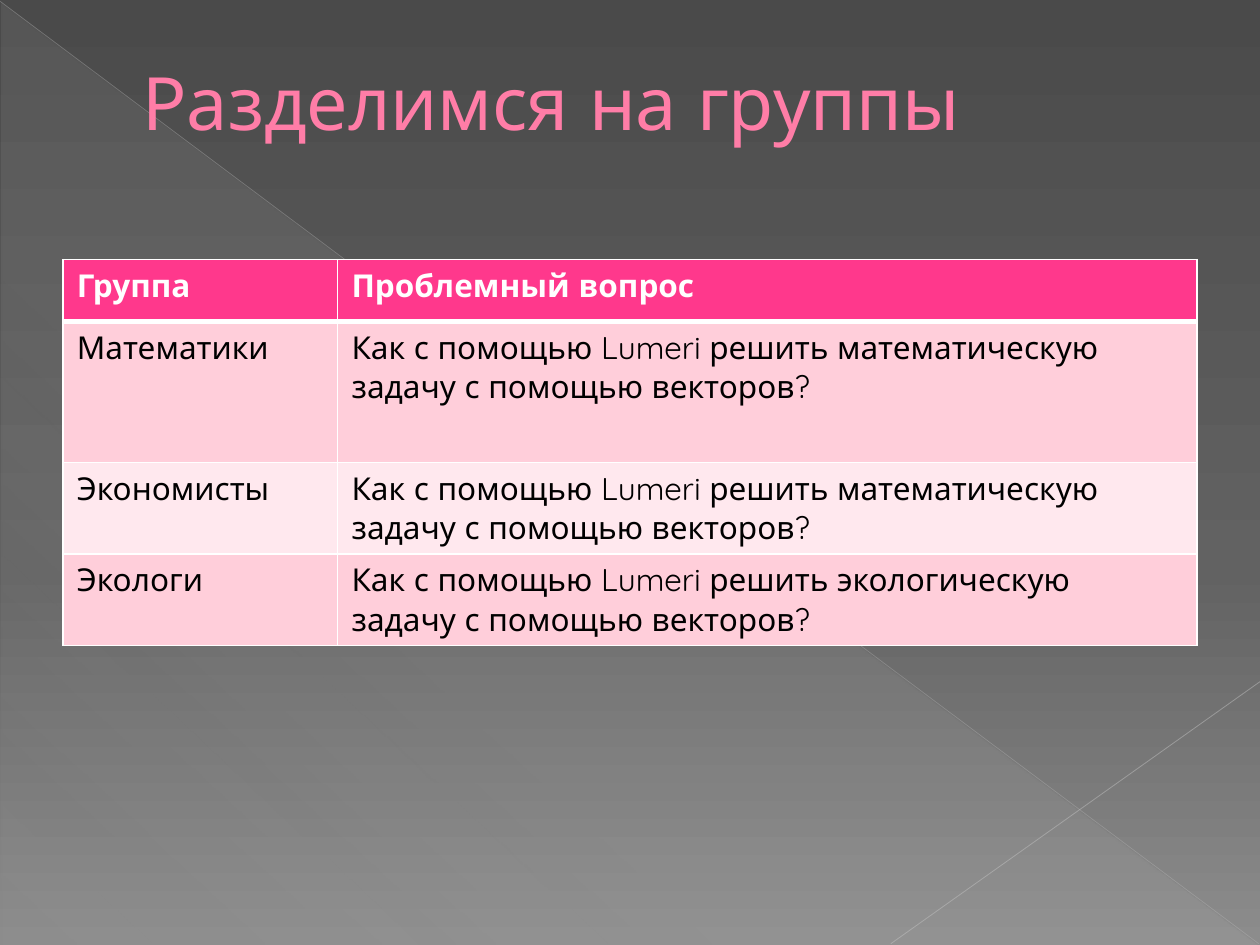
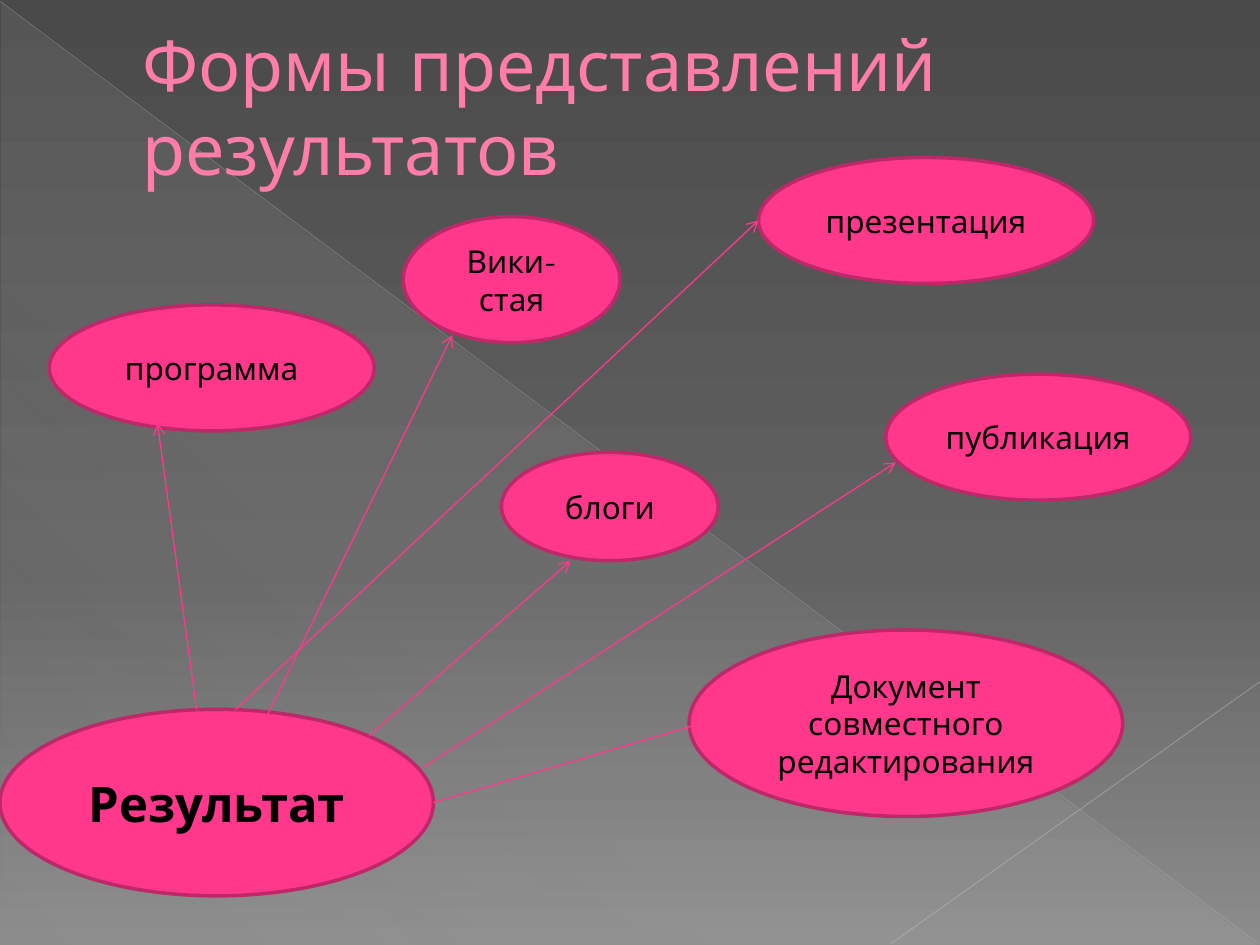
from dataclasses import dataclass
from typing import NamedTuple

from lxml import etree
from pptx import Presentation
from pptx import util as u
from pptx.dml.color import RGBColor
from pptx.enum import shapes, text
from pptx.oxml.ns import qn


class Stop(NamedTuple):
    position: int
    color: str
    opacity: int = 100


@dataclass(frozen=True)
class Theme:
    font: str = "Quicksand"
    title: str = "FF7DA7"
    title_outline: str = "B12761"
    accent: str = "FF388C"
    accent_edge: str = "BD2968"
    ink: str = "000000"
    white: str = "FFFFFF"
    bands: tuple[str, str] = ("FFCEDA", "FFE8EE")
    background: tuple[Stop, ...] = (Stop(0, "4A4A4A"), Stop(60, "626262"), Stop(100, "8C8C8C"))
    veil: tuple[Stop, ...] = (Stop(0, "D2D2D2", 10), Stop(70, "D2D2D2", 8), Stop(100, "D2D2D2", 1))
    body_size: float = 18
    hub_size: float = 28


THEME = Theme()


class Line(NamedTuple):
    start: tuple[float, float]
    end: tuple[float, float]
    color: str = THEME.accent
    width: float = 0.75
    opacity: int = 100
    arrow: bool = True


class Bubble(NamedTuple):
    caption: str
    left: float
    top: float
    width: float
    height: float = 1
    size: float = THEME.body_size
    bold: bool = False


DECORATION = [
    Line((0, 0.01), (9.99, 7.49), "BFBFBF", 0.39, 35, False),
    Line((10, 5.41), (7.07, 7.49), "C6C6C6", 0.47, 45, False),
]

GROUPS = [
    ("Группа", "Проблемный вопрос"),
    ("Математики", "Как с помощью Lumeri решить математическую задачу с помощью векторов?"),
    ("Экономисты", "Как с помощью Lumeri решить математическую задачу с помощью векторов?"),
    ("Экологи", "Как с помощью Lumeri решить экологическую задачу с помощью векторов?"),
]
COLUMN_WIDTHS = (2.18, 6.82)
ROW_HEIGHTS = (0.49, 1.12, 0.49, 0.49)

BUBBLES = [
    Bubble("Результат", 0, 5.63, 3.44, 1.48, THEME.hub_size, True),
    Bubble("Вики-стая", 3.2, 1.72, 1.72),
    Bubble("публикация", 7.03, 2.97, 2.42),
    Bubble("программа", 0.39, 2.42, 2.58),
    Bubble("презентация", 6.02, 1.25, 2.66),
    Bubble("блоги", 3.98, 3.59, 1.72, 0.86),
    Bubble("Документ совместного редактирования", 5.47, 5, 3.44, 1.48),
]
ARROWS = [
    Line((1.56, 5.63), (1.25, 3.36)),
    Line((2.93, 5.84), (4.53, 4.45)),
    Line((3.44, 6.37), (5.7, 5.7)),
    Line((2.11, 5.7), (3.59, 2.66)),
    Line((3.36, 6.09), (7.11, 3.67)),
    Line((1.87, 5.63), (6.02, 1.75)),
]


def add_color(parent, color: str, opacity: int = 100) -> None:
    node = etree.SubElement(parent, qn("a:srgbClr"), val=color)
    if opacity < 100:
        etree.SubElement(node, qn("a:alpha"), val=str(opacity * 1000))


def make_line(tag: str, color: str, points: float):
    line = etree.Element(qn(tag), w=str(u.Pt(points)))
    add_color(etree.SubElement(line, qn("a:solidFill")), color)
    return line


def set_gradient(gradient, stops: tuple[Stop, ...], angle: int) -> None:
    for child in list(gradient):
        gradient.remove(child)
    stop_list = etree.SubElement(gradient, qn("a:gsLst"))
    for stop in stops:
        node = etree.SubElement(stop_list, qn("a:gs"), pos=str(stop.position * 1000))
        add_color(node, stop.color, stop.opacity)
    etree.SubElement(gradient, qn("a:lin"), ang=str(angle * 60000), scaled="0")


def write_text(frame, content: str, *, size: float = THEME.body_size, color: str = THEME.ink,
               bold: bool = False, align=text.PP_ALIGN.LEFT, anchor=text.MSO_ANCHOR.MIDDLE):
    frame.word_wrap = True
    frame.vertical_anchor = anchor
    paragraph = frame.paragraphs[0]
    paragraph.alignment = align
    run = paragraph.add_run()
    run.text = content
    run.font.name = THEME.font
    run.font.size = u.Pt(size)
    run.font.bold = bold
    run.font.color.rgb = RGBColor.from_string(color)
    return paragraph


def add_line(slide, line: Line):
    connector = slide.shapes.add_connector(
        shapes.MSO_CONNECTOR.STRAIGHT, *map(u.Inches, line.start + line.end))
    connector.line.width = u.Pt(line.width)
    connector.line.color.rgb = RGBColor.from_string(line.color)
    properties = connector.element.spPr
    if line.opacity < 100:
        color = properties.find(".//" + qn("a:srgbClr"))
        etree.SubElement(color, qn("a:alpha"), val=str(line.opacity * 1000))
    if line.arrow:
        etree.SubElement(properties.find(qn("a:ln")), qn("a:tailEnd"), type="arrow")
    etree.SubElement(properties, qn("a:effectLst"))
    return connector


def add_title_slide(presentation, title: str, size: float, height: float):
    slide = presentation.slides.add_slide(presentation.slide_layouts[5])
    shape = slide.shapes.title
    shape.left, shape.top, shape.width, shape.height = map(u.Inches, (0.5, 0.35, 7.92, height))
    frame = shape.text_frame
    frame.auto_size = text.MSO_AUTO_SIZE.NONE
    write_text(frame, title, size=size, color=THEME.title)
    shape.element.find(".//" + qn("a:pPr")).set("marL", str(u.Inches(0.53)))
    shape.element.find(".//" + qn("a:rPr")).insert(0, make_line("a:ln", THEME.title_outline, 0.5))
    return slide


def decorate_layout(presentation, slide) -> None:
    master = presentation.slide_master
    master.background.fill.gradient()
    set_gradient(master.element.find(".//" + qn("p:bg") + "//" + qn("a:gradFill")), THEME.background, 90)
    veil = slide.shapes.add_shape(
        shapes.MSO_SHAPE.RIGHT_TRIANGLE, *map(u.Inches, (0.01, 0.02, 9.98, 7.48)))
    veil.shadow.inherit = False
    veil.line.fill.background()
    veil.fill.gradient()
    set_gradient(veil.element.find(".//" + qn("a:gradFill")), THEME.veil, 133)
    tree = slide.slide_layout.element.cSld.spTree
    for index, shape in enumerate([veil] + [add_line(slide, line) for line in DECORATION]):
        shape.element.find(".//" + qn("p:cNvPr")).set("id", str(100 + index))
        tree.insert(2 + index, shape.element)


def set_borders(cell_element, is_header: bool) -> None:
    properties = cell_element.get_or_add_tcPr()
    for index, side in enumerate(("L", "R", "T", "B")):
        width = 3 if is_header and side == "B" else 1
        properties.insert(index, make_line("a:ln" + side, THEME.white, width))


def add_group_table(slide) -> None:
    frame = slide.shapes.add_table(
        len(GROUPS), len(COLUMN_WIDTHS), u.Inches(0.5), u.Inches(2.06),
        u.Inches(sum(COLUMN_WIDTHS)), u.Inches(sum(ROW_HEIGHTS)))
    table = frame.table
    for column, width in zip(table.columns, COLUMN_WIDTHS):
        column.width = u.Inches(width)
    for row, height in zip(table.rows, ROW_HEIGHTS):
        row.height = u.Inches(height)
    cell_elements = list(frame.element.iter(qn("a:tc")))
    for index, cell in enumerate(table.iter_cells()):
        row, column = divmod(index, len(COLUMN_WIDTHS))
        is_header = row == 0
        cell.margin_left = cell.margin_right = u.Inches(0.11)
        cell.margin_top = cell.margin_bottom = u.Inches(0.05)
        cell.fill.solid()
        cell.fill.fore_color.rgb = RGBColor.from_string(
            THEME.accent if is_header else THEME.bands[(row - 1) % 2])
        write_text(cell.text_frame, GROUPS[row][column], bold=is_header,
                   color=THEME.white if is_header else THEME.ink, anchor=text.MSO_ANCHOR.TOP)
        set_borders(cell_elements[index], is_header)


def add_bubble(slide, bubble: Bubble) -> None:
    shape = slide.shapes.add_shape(
        shapes.MSO_SHAPE.OVAL,
        *map(u.Inches, (bubble.left, bubble.top, bubble.width, bubble.height)))
    shape.shadow.inherit = False
    shape.fill.solid()
    shape.fill.fore_color.rgb = RGBColor.from_string(THEME.accent)
    shape.line.color.rgb = RGBColor.from_string(THEME.accent_edge)
    shape.line.width = u.Pt(2)
    write_text(shape.text_frame, bubble.caption, size=bubble.size, bold=bubble.bold,
               align=text.PP_ALIGN.CENTER)


def main() -> None:
    presentation = Presentation()
    presentation.slide_width = u.Inches(10)
    presentation.slide_height = u.Inches(7.5)

    groups_slide = add_title_slide(presentation, "Разделимся на группы", 42, 0.9)
    decorate_layout(presentation, groups_slide)
    add_group_table(groups_slide)

    results_slide = add_title_slide(presentation, "Формы представлений результатов", 40, 0.98)
    for bubble in BUBBLES:
        add_bubble(results_slide, bubble)
    for arrow in ARROWS:
        add_line(results_slide, arrow)

    presentation.save("out.pptx")


if __name__ == "__main__":
    main()
